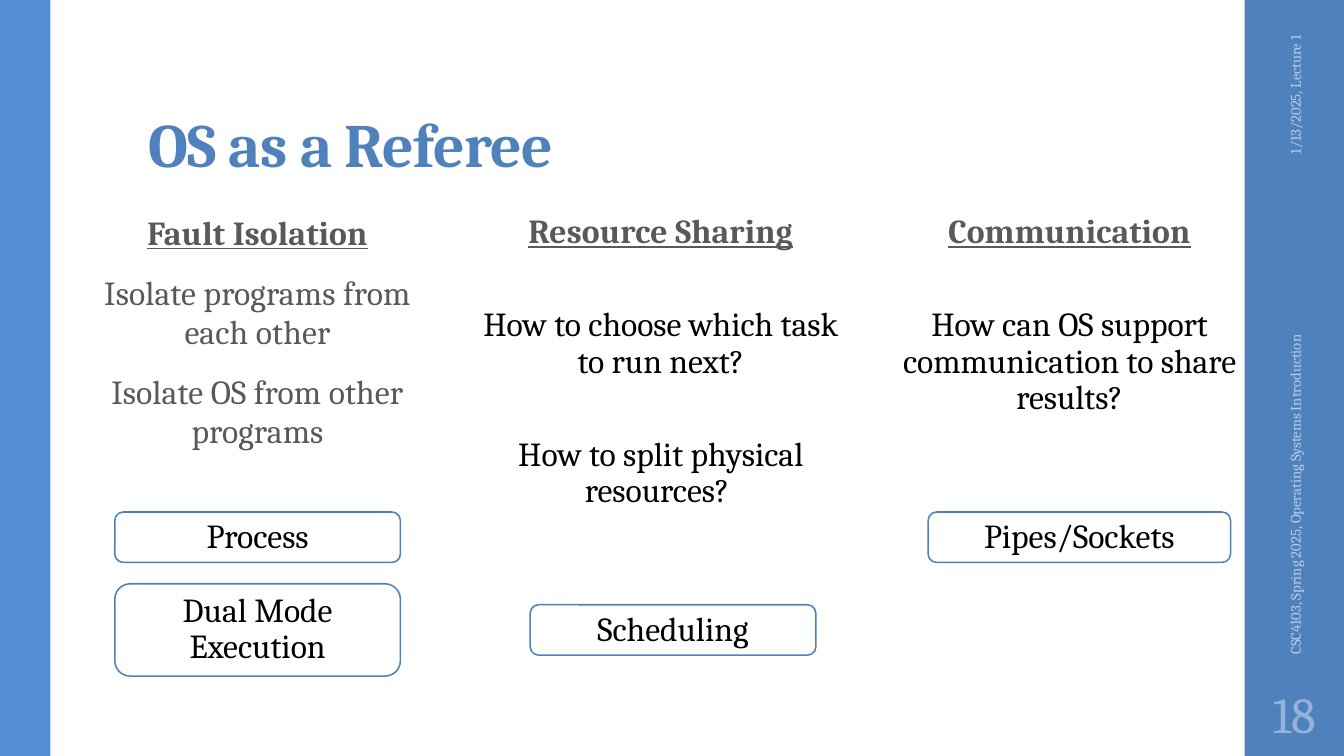
from pptx import Presentation
from pptx.dml.color import RGBColor
from pptx.enum.shapes import MSO_SHAPE
from pptx.enum.text import MSO_ANCHOR, PP_ALIGN
from pptx.util import Pt

BLUE = RGBColor(0x4F, 0x81, 0xBD)
LIGHT_BLUE = RGBColor(0x55, 0x8E, 0xD5)
PALE_BLUE = RGBColor(0xB9, 0xCD, 0xE5)
NUMBER_BLUE = RGBColor(0x95, 0xB3, 0xD7)
GREY = RGBColor(0x59, 0x59, 0x59)
BLACK = RGBColor(0, 0, 0)
WHITE = RGBColor(0xFF, 0xFF, 0xFF)

SLIDE_WIDTH, SLIDE_HEIGHT = 960, 540
COLUMN_TOP, COLUMN_WIDTH, COLUMN_HEIGHT = 149.75, 272, 222

HEADING = {"size": Pt(24), "bold": True, "underline": True}
BODY = {"size": Pt(24)}
CENTERED = {"alignment": PP_ALIGN.CENTER, "line_spacing": 0.9}
# Column styles: text colour, letter spacing and paragraph spacing
GREY_COLUMN = (GREY, 0.1, {"line_spacing": 0.95, "space_before": Pt(14), "space_after": Pt(2)})
BLACK_COLUMN = (BLACK, 0, {"space_before": Pt(40.75)})

# Left edge, style, heading, questions
COLUMNS = [
    (48, GREY_COLUMN, "Fault Isolation",
     ["Isolate programs from each other", "Isolate OS from other programs"]),
    (336, BLACK_COLUMN, "Resource Sharing",
     ["How to choose which task to run next?", "How to split physical resources? "]),
    (628, BLACK_COLUMN, "Communication",
     ["How can OS support communication to share results?"]),
]
# Mechanism and its box
MECHANISMS = [
    ("Process", (82, 365.75, 204, 36)),
    ("Dual Mode Execution", (82, 417, 204, 66)),
    ("Scheduling", (378.75, 432, 204, 36)),
    ("Pipes/Sockets", (663, 365.75, 216, 36)),
]


def set_values(target, values):
    for name, value in values.items():
        setattr(target, name, value)


def write(paragraph, text, color, font_values, paragraph_values, letter_spacing=0):
    set_values(paragraph, paragraph_values)
    run = paragraph.add_run()
    run.text = text
    set_values(run.font, {"name": "Cambria", **font_values})
    run.font.color.rgb = color
    if letter_spacing:
        run._r.get_or_add_rPr().set("spc", str(round(letter_spacing * 100)))


def add_text_frame(slide, box, frame_values=None, rotation=0):
    shape = slide.shapes.add_textbox(*map(Pt, box))
    shape.rotation = rotation
    set_values(shape.text_frame, {"word_wrap": True, **(frame_values or {})})
    return shape.text_frame


def add_block(slide, kind, box, fill, line=None):
    shape = slide.shapes.add_shape(kind, *map(Pt, box))
    shape.shadow.inherit = False
    shape.fill.solid()
    shape.fill.fore_color.rgb = fill
    if line is None:
        shape.line.fill.background()
    else:
        shape.line.color.rgb = line
        shape.line.width = Pt(1.1)
    return shape


def add_title(slide, box, text):
    frame = add_text_frame(slide, box, {"vertical_anchor": MSO_ANCHOR.BOTTOM,
                                        "margin_top": Pt(2)})
    write(frame.paragraphs[0], text, BLUE, {"size": Pt(44), "bold": True},
          {"line_spacing": 0.9}, -0.5)


def add_column(slide, box, style, heading, questions):
    color, letter_spacing, spacing = style
    values = {**CENTERED, **spacing}
    frame = add_text_frame(slide, box)
    write(frame.paragraphs[0], heading, GREY, HEADING,
          {**values, "space_before": Pt(0)}, 0.1)
    for question in questions:
        write(frame.add_paragraph(), question, color, BODY, values, letter_spacing)


def add_mechanism(slide, box, text):
    shape = add_block(slide, MSO_SHAPE.ROUNDED_RECTANGLE, box, WHITE, BLUE)
    set_values(shape.text_frame, {"word_wrap": True, "vertical_anchor": MSO_ANCHOR.TOP})
    write(shape.text_frame.paragraphs[0], text, BLACK, BODY, CENTERED)


def add_sidebar(slide, box):
    left, top, width, height = box
    add_block(slide, MSO_SHAPE.RECTANGLE, box, BLUE)
    middle = {"vertical_anchor": MSO_ANCHOR.MIDDLE}
    # Vertical notes: text, alignment, length, centre from the top
    notes = [
        ("1/13/2025, Lecture 1", PP_ALIGN.RIGHT, 150, 93),
        ("CSC4103, Spring 2025, Operating Systems Introduction", PP_ALIGN.LEFT, 282, 333.5),
    ]
    for text, alignment, length, center in notes:
        note_box = (left + 36 - length / 2, top + center - 14.5, length, 29)
        frame = add_text_frame(slide, note_box, middle, 270)
        write(frame.paragraphs[0], text, PALE_BLUE, {"size": Pt(10.5)}, {"alignment": alignment})
    # Slide number
    margins = {"margin_left": Pt(3.6), "margin_right": Pt(3.6)}
    frame = add_text_frame(slide, (left, top + height - 54, width, 47), {**middle, **margins})
    write(frame.paragraphs[0], "18", NUMBER_BLUE, {"size": Pt(36)},
          {"alignment": PP_ALIGN.CENTER})


def build_slide(presentation):
    slide = presentation.slides.add_slide(presentation.slide_layouts[6])
    # Side bands
    add_block(slide, MSO_SHAPE.RECTANGLE, (0, 0, 36, SLIDE_HEIGHT), LIGHT_BLUE)
    add_sidebar(slide, (889, 0, SLIDE_WIDTH - 889, SLIDE_HEIGHT))
    # Title and columns
    add_title(slide, (99, 23, 763, 110), "OS as a Referee")
    for left, style, heading, questions in COLUMNS:
        add_column(slide, (left, COLUMN_TOP, COLUMN_WIDTH, COLUMN_HEIGHT),
                   style, heading, questions)
    # Mechanisms
    for text, box in MECHANISMS:
        add_mechanism(slide, box, text)


def main():
    presentation = Presentation()
    presentation.slide_width = Pt(SLIDE_WIDTH)
    presentation.slide_height = Pt(SLIDE_HEIGHT)
    build_slide(presentation)
    presentation.save("out.pptx")


if __name__ == "__main__":
    main()
